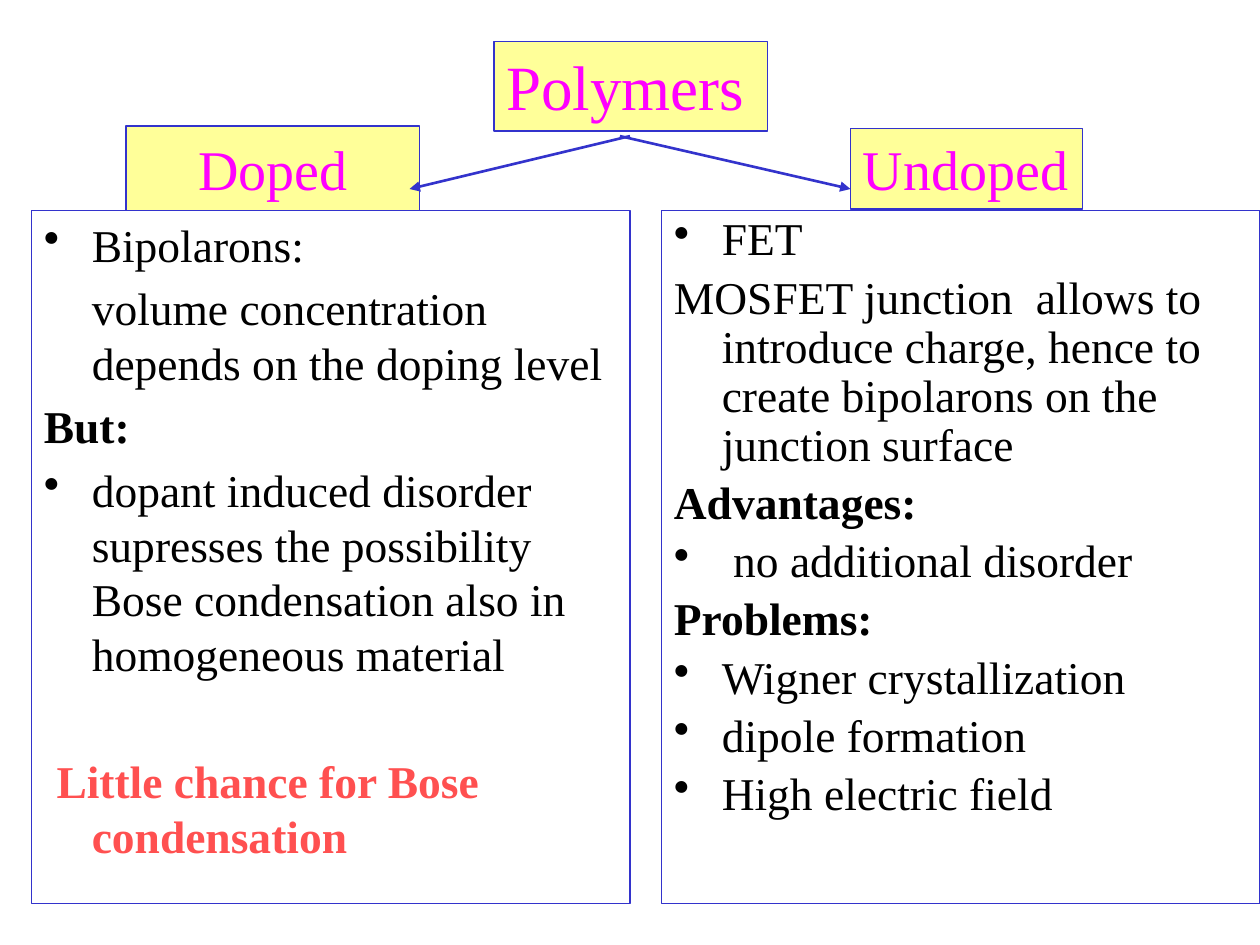
from lxml import etree
from pptx import Presentation
from pptx.dml.color import RGBColor
from pptx.enum.shapes import MSO_CONNECTOR, MSO_SHAPE
from pptx.enum.text import MSO_ANCHOR, PP_ALIGN
from pptx.oxml.ns import qn
from pptx.util import Inches, Pt

RECT, STRAIGHT = MSO_SHAPE.RECTANGLE, MSO_CONNECTOR.STRAIGHT
LEFT, CENTER = PP_ALIGN.LEFT, PP_ALIGN.CENTER
TOP, MIDDLE = MSO_ANCHOR.TOP, MSO_ANCHOR.MIDDLE

FONT = "Times New Roman"
BLUE, YELLOW, MAGENTA = "3333CC", "FFFF99", "FF00FF"
BLACK, RED = "000000", "FF5050"
BODY_SIZE, SPACE, HANG = 26, 5.2, 0.38

# Paragraph styles: bullet, first-line indent, space before, bold, colour
STYLES = {
    "bullet": (True, -HANG, SPACE, False, BLACK),
    "plain": (False, -HANG, SPACE, False, BLACK),
    "block": (False, 0, SPACE, False, BLACK),
    "head": (False, -HANG, SPACE, True, BLACK),
    "verdict": (False, -0.28, 41.5, True, RED),
}

# Panels: left edge, line spacing, paragraphs
PANELS = [
    (0.25, 1.0, [
        ("bullet", "Bipolarons:"),
        ("block", "volume concentration depends on the doping level"),
        ("head", "But:"),
        ("bullet", "dopant induced disorder supresses the possibility "
                   "Bose condensation also in homogeneous material"),
        ("verdict", "Little chance for Bose condensation"),
    ]),
    (5.25, 0.9, [
        ("bullet", "FET"),
        ("plain", "MOSFET junction  allows to introduce charge, hence to "
                  "create bipolarons on the junction surface"),
        ("head", "Advantages:"),
        ("bullet", " no additional disorder"),
        ("head", "Problems:"),
        ("bullet", "Wigner crystallization"),
        ("bullet", "dipole formation"),
        ("bullet", "High electric field"),
    ]),
]
PANEL_TOP, PANEL_WIDTH, PANEL_HEIGHT = 1.67, 4.75, 5.5

# Labels: text, place, size, alignment, anchor, wrap
LABELS = [
    ("Doped", (1, 1, 2.33, 0.67), 32, CENTER, MIDDLE, True),
    ("Undoped", (6.75, 1.02, 1.84, 0.64), 32, LEFT, TOP, False),
    ("Polymers", (3.92, 0.33, 2.17, 0.71), 36, LEFT, TOP, True),
]
ARROWS = [((5, 1.08), (3.25, 1.5)), ((4.92, 1.08), (6.75, 1.5))]


def color(value):
    return RGBColor.from_string(value)


def add_box(page, place, fill=None, anchor=TOP, wrap=True):
    box = page.shapes.add_shape(RECT, *map(Inches, place))
    box.shadow.inherit = False
    if fill:
        box.fill.solid()
        box.fill.fore_color.rgb = color(fill)
    else:
        box.fill.background()
    box.line.color.rgb = color(BLUE)
    box.line.width = Pt(0.75)
    box.text_frame.word_wrap = wrap
    box.text_frame.vertical_anchor = anchor
    return box


def add_span(para, text, size, ink, bold=False):
    span = para.add_run()
    span.text = text
    span.font.name = FONT
    span.font.size = Pt(size)
    span.font.bold = bold
    span.font.color.rgb = color(ink)


def format_para(para, style, line_spacing):
    bullet, indent, before, _, _ = STYLES[style]
    para.alignment = LEFT
    para.line_spacing = line_spacing
    para.space_before = Pt(before)
    props = para._p.get_or_add_pPr()
    props.set("marL", str(Inches(HANG)))
    props.set("indent", str(Inches(indent)))
    if bullet:
        etree.SubElement(props, qn("a:buChar")).set("char", "•")
    else:
        etree.SubElement(props, qn("a:buNone"))


def add_panel(page, left, line_spacing, paragraphs):
    box = add_box(page, (left, PANEL_TOP, PANEL_WIDTH, PANEL_HEIGHT))
    frame = box.text_frame
    for index, (style, text) in enumerate(paragraphs):
        para = frame.add_paragraph() if index else frame.paragraphs[0]
        format_para(para, style, line_spacing)
        bold, ink = STYLES[style][3:]
        add_span(para, text, BODY_SIZE, ink, bold)


def add_label(page, text, place, size, align, anchor, wrap):
    box = add_box(page, place, YELLOW, anchor, wrap)
    para = box.text_frame.paragraphs[0]
    para.alignment = align
    add_span(para, text, size, MAGENTA)


def add_arrow(page, start, end):
    arrow = page.shapes.add_connector(STRAIGHT, *map(Inches, start + end))
    arrow.line.color.rgb = color(BLUE)
    arrow.line.width = Pt(1.5)
    line = arrow.line._get_or_add_ln()
    etree.SubElement(line, qn("a:tailEnd")).set("type", "triangle")
    etree.SubElement(arrow._element.spPr, qn("a:effectLst"))


def main():
    deck = Presentation()
    deck.slide_width, deck.slide_height = Inches(10), Inches(7.5)
    page = deck.slides.add_slide(deck.slide_layouts[6])
    for panel in PANELS:
        add_panel(page, *panel)
    for label in LABELS:
        add_label(page, *label)
    for start, end in ARROWS:
        add_arrow(page, start, end)
    deck.save("out.pptx")


if __name__ == "__main__":
    main()
